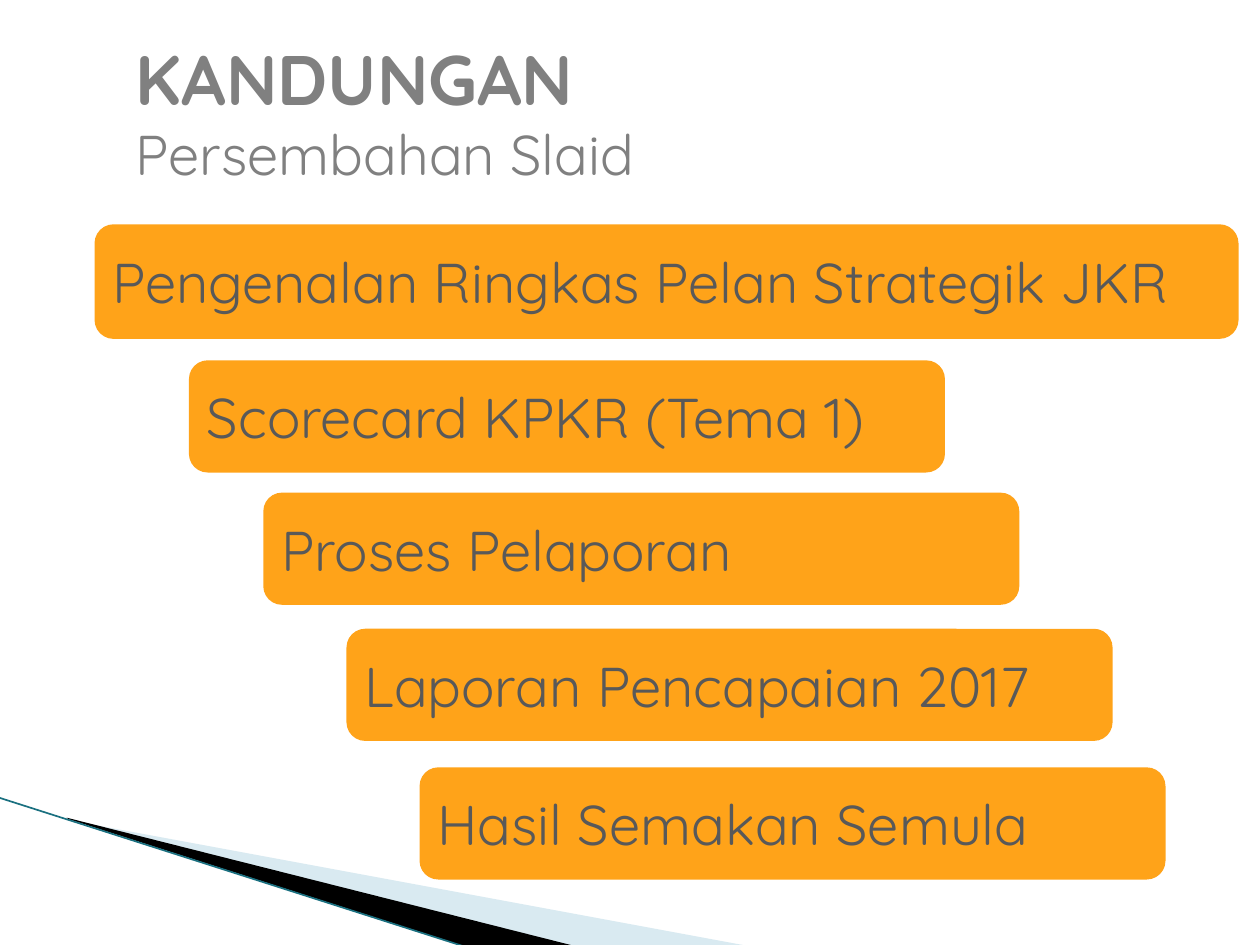
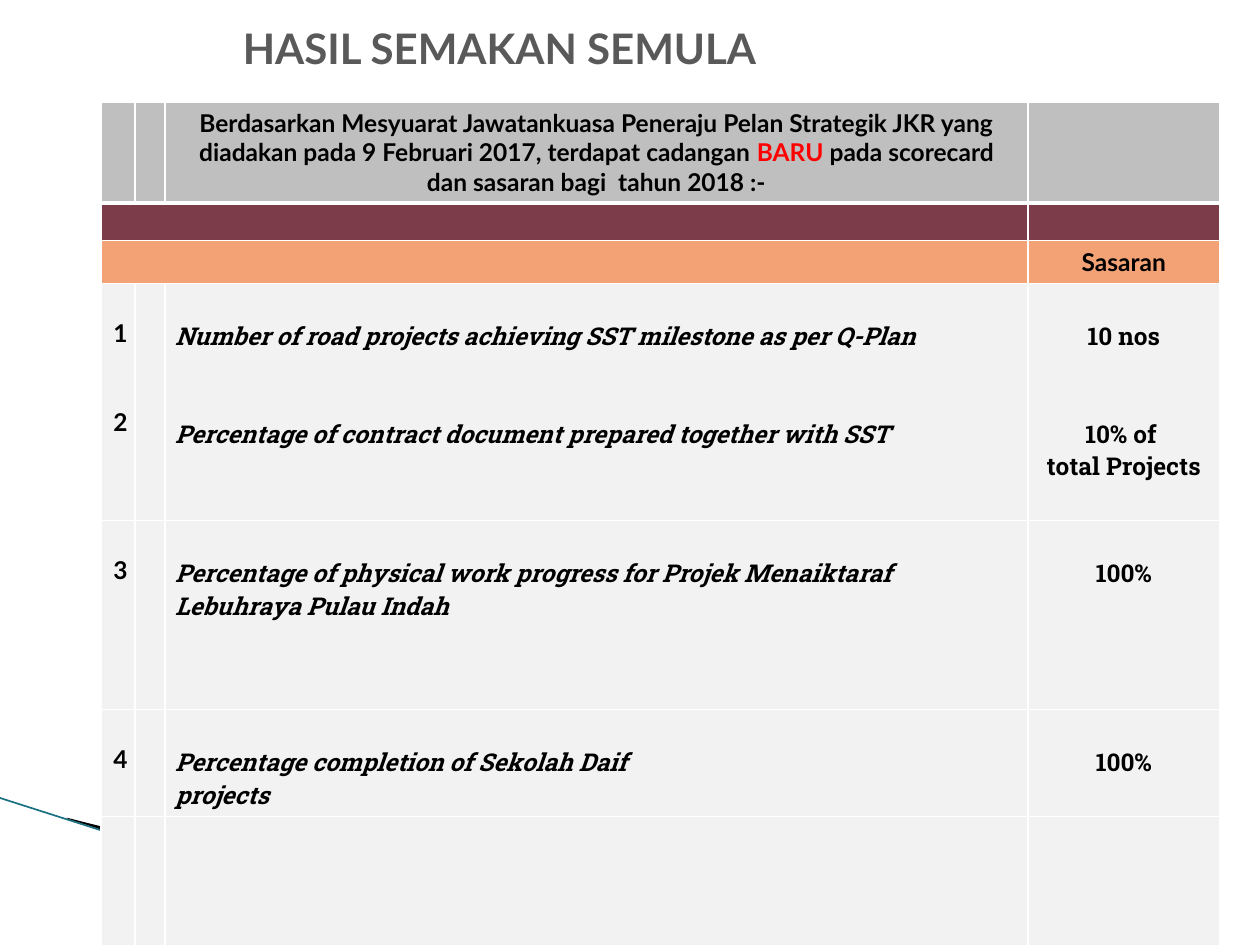
from lxml import etree
from pptx import Presentation
from pptx.dml.color import RGBColor
from pptx.enum import shapes, text
from pptx.oxml import ns
from pptx.util import Inches, Pt

WHITE = RGBColor(0xFF, 0xFF, 0xFF)
BLACK = RGBColor(0x00, 0x00, 0x00)
RED = RGBColor(0xFF, 0x00, 0x00)
TITLE_GREY = RGBColor(0x80, 0x80, 0x80)
DARK_GREY = RGBColor(0x59, 0x59, 0x59)
ORANGE = RGBColor(0xFF, 0x99, 0x00)
PALE_BLUE = RGBColor(0xA0, 0xCB, 0xDC)
TEAL = RGBColor(0x1A, 0x70, 0x80)
HEAD_GREY = RGBColor(0xBF, 0xBF, 0xBF)
MAROON = RGBColor(0x7D, 0x3C, 0x4A)
PEACH = RGBColor(0xF3, 0xA2, 0x76)
BODY_GREY = RGBColor(0xF2, 0xF2, 0xF2)


def add_run(p, words, font, size, color, bold=False, italic=False):
    r = p.add_run()
    r.text = words
    r.font.name, r.font.size = font, Pt(size)
    r.font.bold, r.font.italic = bold, italic
    r.font.color.rgb = color


def fill_shape(sp, color, opacity=100):
    sp.shadow.inherit = False
    sp.line.fill.background()
    sp.fill.solid()
    sp.fill.fore_color.rgb = color
    if opacity < 100:
        clr = sp.fill._xPr.find(".//" + ns.qn("a:srgbClr"))
        etree.SubElement(clr, ns.qn("a:alpha"), val=str(opacity * 1000))


prs = Presentation()
prs.slide_width, prs.slide_height = Inches(10), Inches(7.5)
s1, s2 = [prs.slides.add_slide(prs.slide_layouts[6]) for _ in range(2)]

# Corner wedges (frame, then outline running past it) and edge line on both slides
WEDGES = [
    (PALE_BLUE, 40, (0.78, 5.47, 4.16, 1.58),
     [(0.55, 6.51), (5.95, 7.51), (4.56, 7.51), (0.55, 6.5)]),
    (BLACK, 100, (-0.06, 6.33, 4.16, 0.92),
     [(0.53, 6.49), (4.57, 7.51), (3.72, 7.52), (0.54, 6.5)]),
]
for s in (s1, s2):
    for color, opacity, frame, points in WEDGES:
        points = [(Inches(x), Inches(y)) for x, y in points]
        fb = s.shapes.build_freeform(*points[0])
        fb.add_line_segments(points[1:], close=True)
        sp = fb.convert_to_shape()
        fill_shape(sp, color, opacity)
        left, top, width, height = map(Inches, frame)
        dx, dy = sp.left - left, sp.top - top
        sp.left, sp.top, sp.width, sp.height = left, top, width, height
        outline = sp._element.find(".//" + ns.qn("a:path"))
        outline.set("w", str(width))
        outline.set("h", str(height))
        for pt in outline.iter(ns.qn("a:pt")):
            pt.set("x", str(int(pt.get("x")) + dx))
            pt.set("y", str(int(pt.get("y")) + dy))
    edge = s.shapes.add_connector(shapes.MSO_CONNECTOR.STRAIGHT, Inches(-0.01),
                                  Inches(6.33), Inches(3.71), Inches(7.52))
    edge.line.color.rgb = TEAL
    edge.line.width = Pt(0.95)
    etree.SubElement(edge._element.spPr, ns.qn("a:effectLst"))

# Slide 1: title
tf = s1.shapes.add_textbox(Inches(0.98), Inches(0.23), Inches(7.09), Inches(1.31)).text_frame
tf.word_wrap = True
add_run(tf.paragraphs[0], "KANDUNGAN", "Quicksand", 40, TITLE_GREY, bold=True)
add_run(tf.add_paragraph(), "Persembahan Slaid", "Quicksand", 32, TITLE_GREY)

# Slide 1: stepped agenda bars
AGENDA = [
    ("Pengenalan Ringkas Pelan Strategik JKR", 0.75, 1.78, 9.08, 0.91),
    ("Scorecard KPKR (Tema 1)", 1.5, 2.86, 6, 0.89),
    ("Proses Pelaporan", 2.09, 3.91, 6, 0.89),
    ("Laporan Pencapaian 2017", 2.75, 4.99, 6.08, 0.89),
    ("Hasil Semakan Semula", 3.33, 6.09, 5.92, 0.89),
]
for topic, *box in AGENDA:
    sp = s1.shapes.add_shape(shapes.MSO_SHAPE.ROUNDED_RECTANGLE, *map(Inches, box))
    fill_shape(sp, ORANGE, 90)
    tf = sp.text_frame
    tf.word_wrap = True
    tf.vertical_anchor = text.MSO_ANCHOR.MIDDLE
    p = tf.paragraphs[0]
    p.alignment = text.PP_ALIGN.LEFT
    add_run(p, topic, "Quicksand", 32, DARK_GREY)

# Slide 2: table grid, fills and borders
COLS = [0.27, 0.24, 6.85, 1.52]
ROWS = [0.8, 0.3, 0.34, 1.88, 1.5, 0.85, 1.07]
FILLS = [HEAD_GREY, MAROON, PEACH] + [BODY_GREY] * 4
table = s2.shapes.add_table(len(ROWS), len(COLS), Inches(0.8), Inches(0.81),
                            Inches(sum(COLS)), Inches(sum(ROWS))).table
table.first_row = table.horz_banding = False
for col, width in zip(table.columns, COLS):
    col.width = Inches(width)
for row, height in zip(table.rows, ROWS):
    row.height = Inches(height)
for i, color in enumerate(FILLS):
    for cell in table.rows[i].cells:
        cell.fill.solid()
        cell.fill.fore_color.rgb = color
        tcPr = cell._tc.get_or_add_tcPr()
        for n, side in enumerate(("lnL", "lnR", "lnT", "lnB")):
            thick = (i, side) in ((0, "lnB"), (1, "lnT"))
            ln = etree.Element(ns.qn("a:" + side), w=str(Pt(3 if thick else 1)))
            solid = etree.SubElement(ln, ns.qn("a:solidFill"))
            etree.SubElement(solid, ns.qn("a:srgbClr"), val=str(WHITE))
            tcPr.insert(n, ln)
for i in (1, 2):
    table.cell(i, 0).merge(table.cell(i, 2))

# Slide 2: table text; each paragraph is (words, points of space before)
BODY = [
    (3, [("1", 0), ("2", 33.6)],
     [("Number of road projects achieving SST milestone as per Q-Plan", 0),
      ("Percentage of contract document prepared together with SST", 37)],
     [("10 nos", 0), ("10% of ", 37), ("total Projects", 0)]),
    (4, [("3", 0)],
     [("Percentage of physical work progress for Projek Menaiktaraf Lebuhraya Pulau Indah", 0)],
     [("100%", 0)]),
    (5, [("4", 0)],
     [("Percentage completion of Sekolah Daif", 0), ("projects", 0)],
     [("100%", 0)]),
]
# column, font, italic, alignment, side inset, top inset
STYLES = [
    (0, "Lato", False, text.PP_ALIGN.LEFT, 0.1, 0.28),
    (2, "Roboto Slab", True, text.PP_ALIGN.LEFT, 0.08, 0.29),
    (3, "Roboto Slab", False, text.PP_ALIGN.CENTER, 0.08, 0.29),
]
for i, *columns in BODY:
    for (j, font, italic, align, side, top), paras in zip(STYLES, columns):
        cell = table.cell(i, j)
        cell.margin_left = cell.margin_right = Inches(side)
        cell.margin_top, cell.margin_bottom = Inches(top), Inches(0.04)
        tf = cell.text_frame
        for k, (words, gap) in enumerate(paras):
            p = tf.add_paragraph() if k else tf.paragraphs[0]
            p.alignment = align
            if gap:
                p.space_before = Pt(gap)
            add_run(p, words, font, 14, BLACK, bold=True, italic=italic)

cell = table.cell(0, 2)
cell.vertical_anchor = text.MSO_ANCHOR.MIDDLE
p = cell.text_frame.paragraphs[0]
p.alignment = text.PP_ALIGN.CENTER
for words, color in [
    ("Berdasarkan Mesyuarat Jawatankuasa Peneraju Pelan Strategik JKR yang "
     "diadakan pada 9 Februari 2017, terdapat cadangan ", BLACK),
    ("BARU ", RED),
    ("pada scorecard dan sasaran bagi  tahun 2018 :-", BLACK),
]:
    add_run(p, words, "Lato", 14, color, bold=True)
p = table.cell(2, 3).text_frame.paragraphs[0]
p.alignment = text.PP_ALIGN.CENTER
add_run(p, "Sasaran", "Lato", 14, BLACK, bold=True)

# Small type in empty cells keeps the thin rows thin
for cell in table.iter_cells():
    if not cell.text_frame.text:
        etree.SubElement(cell.text_frame.paragraphs[0]._p, ns.qn("a:endParaRPr"), sz="1000")

# Slide 2: title
tf = s2.shapes.add_textbox(Inches(0.27), Inches(0.13), Inches(7.46), Inches(0.5)).text_frame
tf.word_wrap = True
p = tf.paragraphs[0]
p.alignment = text.PP_ALIGN.CENTER
add_run(p, "HASIL SEMAKAN SEMULA ", "Lato", 24, DARK_GREY, bold=True)

prs.save("out.pptx")
